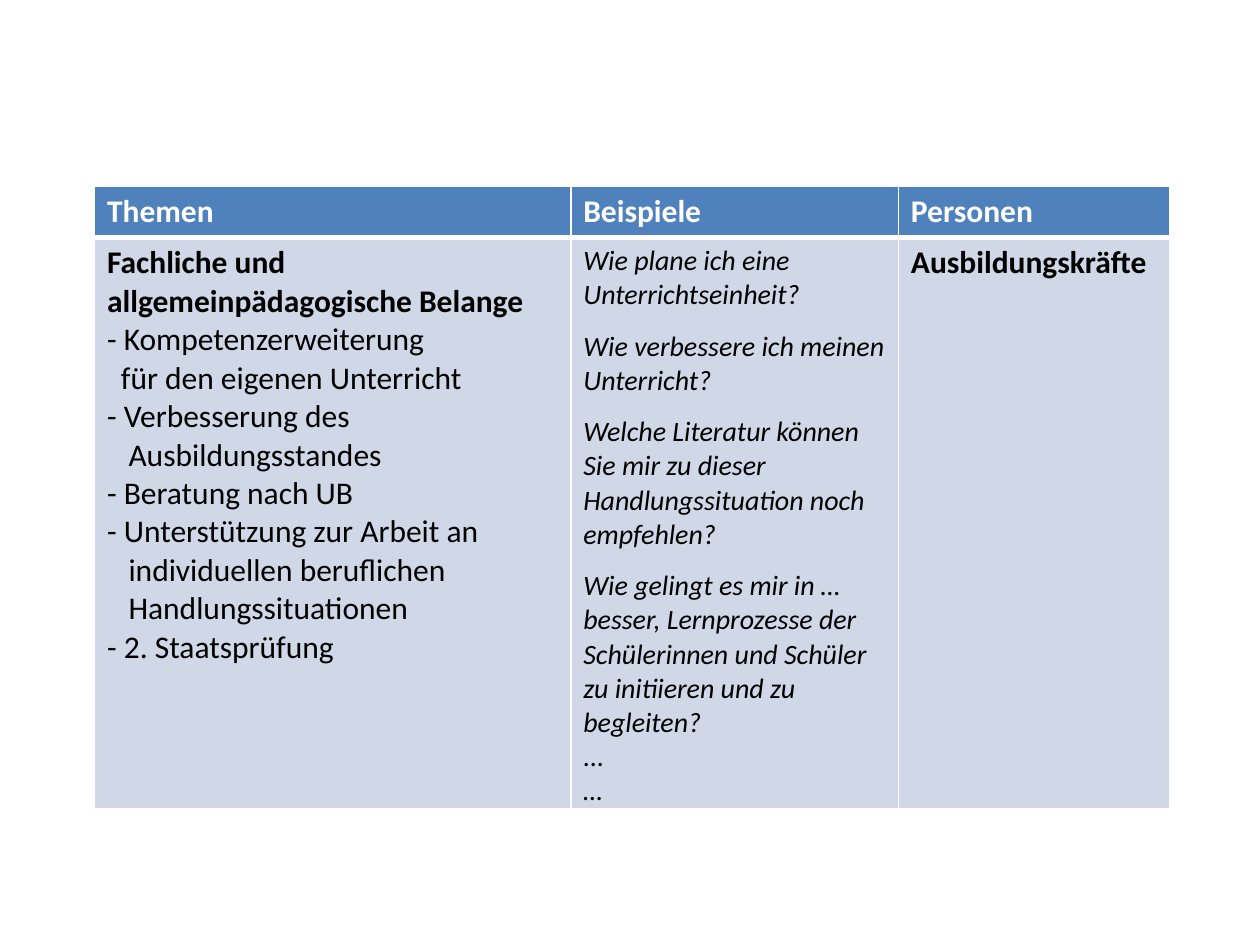
from lxml import etree
from pptx import Presentation
from pptx.dml.color import RGBColor
from pptx.oxml.ns import qn
from pptx.util import Inches, Pt

THEME = {
    "font": "Calibri", "size": 18, "example_size": 16,
    "header_fill": "4F81BD", "body_fill": "D0D8E8",
    "header_text": "FFFFFF", "body_text": "000000",
    "border": "FFFFFF", "thin": 1, "thick": 3,
}

# Content: paragraphs are (text, left indent in inches, space after in points)
HEADERS = ["Themen", "Beispiele", "Personen"]
TOPIC_TITLE = "Fachliche und allgemeinpädagogische Belange"
TOPICS = [
    ("- Kompetenzerweiterung", 0, 0),
    ("für den eigenen Unterricht", 0.11, 0),
    ("- Verbesserung des", 0, 0),
    ("Ausbildungsstandes", 0.17, 0),
    ("- Beratung nach UB", 0, 0),
    ("- Unterstützung zur Arbeit an", 0, 0),
    ("individuellen beruflichen", 0.17, 0),
    ("Handlungssituationen", 0.17, 0),
    ("- 2. Staatsprüfung", 0, 0),
]
GAP = 9.75
EXAMPLES = [
    ("Wie plane ich eine Unterrichtseinheit?", 0, GAP),
    ("Wie verbessere ich meinen Unterricht?", 0, GAP),
    ("Welche Literatur können Sie mir zu dieser Handlungssituation noch empfehlen?", 0, GAP),
    ("Wie gelingt es mir in … besser, Lernprozesse der Schülerinnen und Schüler "
     "zu initiieren und zu begleiten?", 0, 0),
    ("...", 0, 0),
    ("…", 0, 0),
]
PEOPLE = "Ausbildungskräfte"

# Layout
LEFT, TOP = 0.75, 1.48
COL_WIDTHS = [3.78, 2.6, 2.15]
ROW_HEIGHTS = [0.39, 4.49]


def styled(paragraphs, color, size=THEME["size"], bold=False, italic=False):
    return [(*para, color, size, bold, italic) for para in paragraphs]


def title(text, color):
    return styled([(text, 0, 0)], color, bold=True)


def set_borders(cell, widths):
    tcPr = cell._tc.get_or_add_tcPr()
    for side, width in widths.items():
        ln = etree.SubElement(tcPr, qn(f"a:ln{side}"), w=str(Pt(width)))
        fill = etree.SubElement(ln, qn("a:solidFill"))
        etree.SubElement(fill, qn("a:srgbClr"), val=THEME["border"])


def write_cell(cell, paragraphs):
    tf = cell.text_frame
    for i, (text, indent, after, color, size, bold, italic) in enumerate(paragraphs):
        p = tf.add_paragraph() if i else tf.paragraphs[0]
        p.space_after = Pt(after)
        if indent:
            p._p.get_or_add_pPr().set("marL", str(Inches(indent)))
        r = p.add_run()
        r.text = text
        r.font.name = THEME["font"]
        r.font.size = Pt(size)
        r.font.bold = bold
        r.font.italic = italic
        r.font.color.rgb = RGBColor.from_string(color)


prs = Presentation()
prs.slide_width, prs.slide_height = Inches(10), Inches(7.5)
s = prs.slides.add_slide(prs.slide_layouts[6])

# Table grid
table = s.shapes.add_table(
    len(ROW_HEIGHTS), len(COL_WIDTHS), Inches(LEFT), Inches(TOP),
    Inches(sum(COL_WIDTHS)), Inches(sum(ROW_HEIGHTS))).table
for column, width in zip(table.columns, COL_WIDTHS):
    column.width = Inches(width)
for row, height in zip(table.rows, ROW_HEIGHTS):
    row.height = Inches(height)

# Header row and body row
ink = THEME["body_text"]
rows = [
    [title(text, THEME["header_text"]) for text in HEADERS],
    [title(TOPIC_TITLE, ink) + styled(TOPICS, ink),
     styled(EXAMPLES, ink, THEME["example_size"], italic=True),
     title(PEOPLE, ink)],
]
thin, thick = THEME["thin"], THEME["thick"]
row_styles = [
    (THEME["header_fill"], {"L": thin, "R": thin, "T": thin, "B": thick}),
    (THEME["body_fill"], {"L": thin, "R": thin, "T": thick, "B": thin}),
]
for y, (cells, (fill, borders)) in enumerate(zip(rows, row_styles)):
    for x, paragraphs in enumerate(cells):
        cell = table.cell(y, x)
        set_borders(cell, borders)
        cell.fill.solid()
        cell.fill.fore_color.rgb = RGBColor.from_string(fill)
        if y:
            cell.margin_bottom = Inches(0)
        write_cell(cell, paragraphs)

prs.save("out.pptx")
